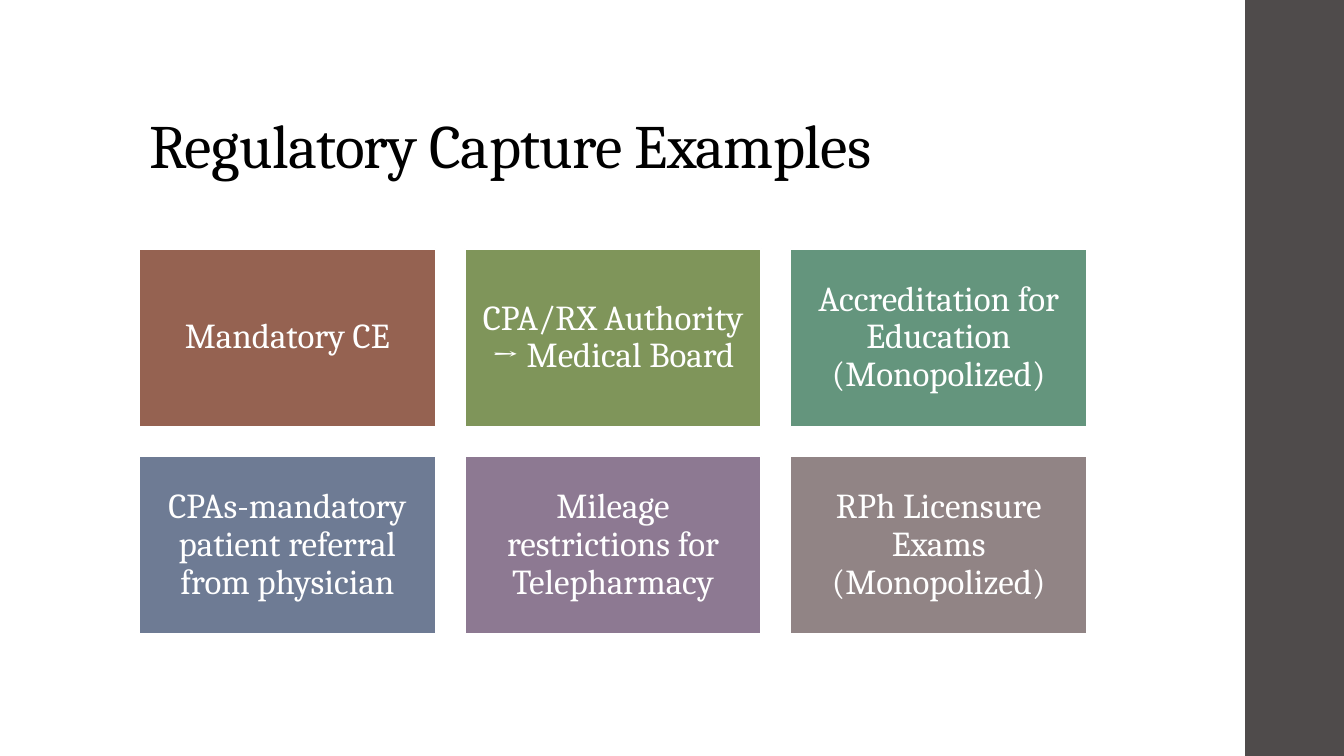
from dataclasses import dataclass

from pptx import Presentation
from pptx.dml.color import RGBColor as Rgb
from pptx.enum.shapes import MSO_SHAPE as Shape
from pptx.enum.text import MSO_ANCHOR as Anchor, PP_ALIGN as Align
from pptx.util import Inches, Pt


@dataclass(frozen=True)
class Theme:
    font: str = "Cambria"
    ink: str = "000000"
    white: str = "FFFFFF"
    band: str = "4F4B4B"
    title: int = 44
    body: int = 25


THEME = Theme()
CARDS = [
    ("Mandatory CE", "956251"),
    ("CPA/RX Authority → Medical Board", "7F955A"),
    ("Accreditation for Education (Monopolized)", "64957D"),
    ("CPAs-mandatory patient referral from physician", "6E7B94"),
    ("Mileage restrictions for Telepharmacy", "8D7992"),
    ("RPh Licensure Exams (Monopolized)", "918485"),
]
COLS = 3
LEFT, TOP = 1.38, 2.47
WIDE, HIGH = 2.94, 1.76
STEP_X, STEP_Y = 3.23, 2.06


def set_text(frame, text, size, color, align, anchor):
    frame.text = text
    frame.word_wrap = True
    frame.vertical_anchor = anchor
    par = frame.paragraphs[0]
    par.alignment = align
    par.line_spacing = 0.9
    font = par.runs[0].font
    font.name = THEME.font
    font.size = Pt(size)
    font.color.rgb = Rgb.from_string(color)
    return font


def add_rect(slide, x, y, wide, high, color):
    rect = slide.shapes.add_shape(
        Shape.RECTANGLE, Inches(x), Inches(y), Inches(wide), Inches(high))
    rect.shadow.inherit = False
    rect.fill.solid()
    rect.fill.fore_color.rgb = Rgb.from_string(color)
    rect.line.fill.background()
    return rect


def add_title(slide, text):
    box = slide.shapes.add_textbox(
        Inches(LEFT), Inches(0.4), Inches(10.6), Inches(1.45))
    font = set_text(box.text_frame, text, THEME.title, THEME.ink,
                    Align.LEFT, Anchor.BOTTOM)
    font._element.set("spc", "-50")


def add_card(slide, x, y, text, color):
    card = add_rect(slide, x, y, WIDE, HIGH, color)
    card.line.color.rgb = Rgb.from_string(THEME.white)
    card.line.width = Pt(1.1)
    frame = card.text_frame
    frame.margin_left = frame.margin_right = Inches(0.1)
    frame.margin_top = frame.margin_bottom = Inches(0.1)
    set_text(frame, text, THEME.body, THEME.white, Align.CENTER, Anchor.MIDDLE)


def main():
    deck = Presentation()
    deck.slide_width = Inches(13.33)
    deck.slide_height = Inches(7.5)
    slide = deck.slides.add_slide(deck.slide_layouts[6])
    add_rect(slide, 12.35, 0, 0.98, 7.5, THEME.band)
    add_title(slide, "Regulatory Capture Examples")
    for i, (text, color) in enumerate(CARDS):
        row, col = divmod(i, COLS)
        add_card(slide, LEFT + col * STEP_X, TOP + row * STEP_Y, text, color)
    deck.save("out.pptx")


if __name__ == "__main__":
    main()
